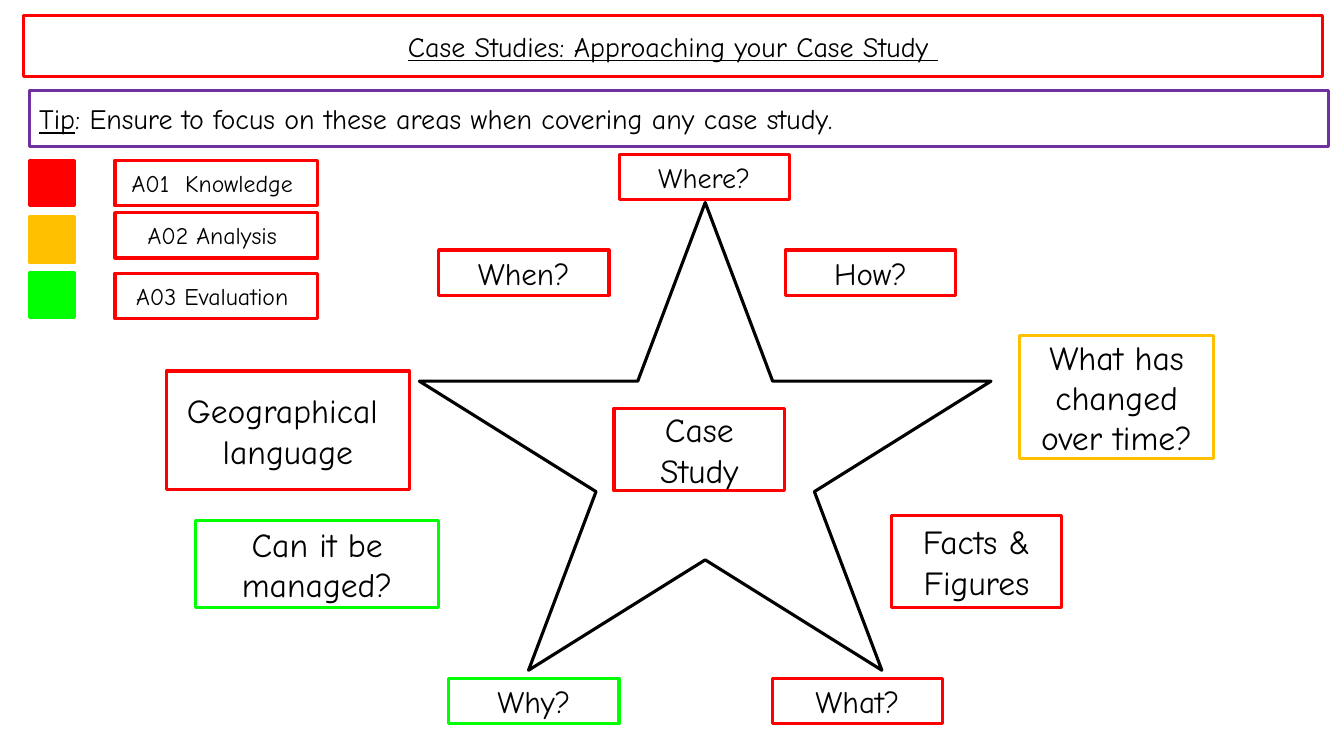
from pptx import Presentation
from pptx.dml.color import RGBColor
from pptx.enum.shapes import MSO_SHAPE as Shape
from pptx.enum.text import MSO_ANCHOR as Anchor, MSO_AUTO_SIZE as AutoSize, PP_ALIGN as Align
from pptx.util import Inches, Pt

RED = RGBColor(0xFF, 0x00, 0x00)
AMBER = RGBColor(0xFF, 0xC0, 0x00)
GREEN = RGBColor(0x00, 0xFF, 0x00)
PURPLE = RGBColor(0x70, 0x30, 0xA0)
BLACK = RGBColor(0x00, 0x00, 0x00)
WHITE = RGBColor(0xFF, 0xFF, 0xFF)

TITLE_ONLY = 5
BANNER_WIDTH = 12.89
LABEL_SIZE = (1.69, 0.45)
SWATCH_SIZE = (0.45, 0.45)
KEY_SIZE = (2.01, 0.45)


def write_text(shape, text, size=24, font="Comic Neue", color=BLACK,
               align=Align.CENTER, underlined=""):
    frame = shape.text_frame
    frame.word_wrap = True
    frame.auto_size = AutoSize.NONE
    frame.vertical_anchor = Anchor.MIDDLE
    for index, line in enumerate(text.split("\n")):
        paragraph = frame.add_paragraph() if index else frame.paragraphs[0]
        paragraph.alignment = align
        for part, underline in ((underlined, True), (line, False)):
            if part:
                run = paragraph.add_run()
                run.text = part
                run.font.name = font
                run.font.size = Pt(size)
                run.font.color.rgb = color
                run.font.underline = underline


class CaseStudySlide:
    line_width = Pt(2.25)

    def __init__(self, presentation):
        layout = presentation.slide_layouts[TITLE_ONLY]
        self.slide = presentation.slides.add_slide(layout)

    def outline(self, shape, color, fill=None):
        shape.line.color.rgb = color
        shape.line.width = self.line_width
        if fill is None:
            shape.fill.background()
        else:
            shape.fill.solid()
            shape.fill.fore_color.rgb = fill

    def title(self, text, left, top, width, height):
        shape = self.slide.shapes.title
        shape.left, shape.top = Inches(left), Inches(top)
        shape.width, shape.height = Inches(width), Inches(height)
        self.outline(shape, RED)
        write_text(shape, "", size=20, underlined=text)

    def shape(self, kind, left, top, width, height, color, fill=None):
        shape = self.slide.shapes.add_shape(
            kind, Inches(left), Inches(top), Inches(width), Inches(height))
        shape.shadow.inherit = False
        self.outline(shape, color, fill)
        return shape

    def box(self, text, left, top, width, height, color=RED, **text_format):
        shape = self.shape(Shape.RECTANGLE, left, top, width, height, color)
        write_text(shape, text, **text_format)

    def swatch(self, left, top, color):
        self.shape(Shape.RECTANGLE, left, top, *SWATCH_SIZE, color, fill=color)


def main():
    presentation = Presentation()
    presentation.slide_width = Inches(13.33)
    presentation.slide_height = Inches(7.5)
    page = CaseStudySlide(presentation)

    page.title("Case Studies: Approaching your Case Study ", 0.23, 0.15, BANNER_WIDTH, 0.61)
    page.shape(Shape.STAR_5_POINT, 4.16, 2.01, 5.67, 4.64, BLACK, fill=WHITE)

    labels = [
        ("Where?", 6.14, 1.53, RED, 20),
        ("Why?", 4.45, 6.73, GREEN, 22.2),
        ("What?", 7.66, 6.73, RED, 22.2),
        ("How?", 7.79, 2.48, RED, 22.2),
        ("When?", 4.35, 2.48, RED, 22.2),
    ]
    for text, left, top, color, size in labels:
        page.box(text, left, top, *LABEL_SIZE, color, size=size)

    prompts = [
        ("Facts & Figures", 8.84, 5.11, 1.69, 0.92, RED),
        ("Geographical \nlanguage", 1.65, 3.68, 2.41, 1.18, RED),
        ("Can it be managed?", 1.94, 5.16, 2.41, 0.87, GREEN),
        ("What has changed over time?", 10.11, 3.33, 1.93, 1.22, AMBER),
        ("Case Study", 6.09, 4.05, 1.69, 0.82, RED),
    ]
    for prompt in prompts:
        page.box(*prompt)

    objectives = [
        ("A01  Knowledge ", 1.59, 1.59, RED),
        ("A02 Analysis ", 2.15, 2.11, AMBER),
        ("A03 Evaluation ", 2.7, 2.71, GREEN),
    ]
    for text, swatch_top, key_top, color in objectives:
        page.swatch(0.29, swatch_top, color)
        page.box(text, 1.14, key_top, *KEY_SIZE, size=17)

    page.box(": Ensure to focus on these areas when covering any case study.",
             0.29, 0.9, BANNER_WIDTH, 0.55, PURPLE,
             size=20, align=Align.LEFT, underlined="Tip")

    presentation.save("out.pptx")


if __name__ == "__main__":
    main()
